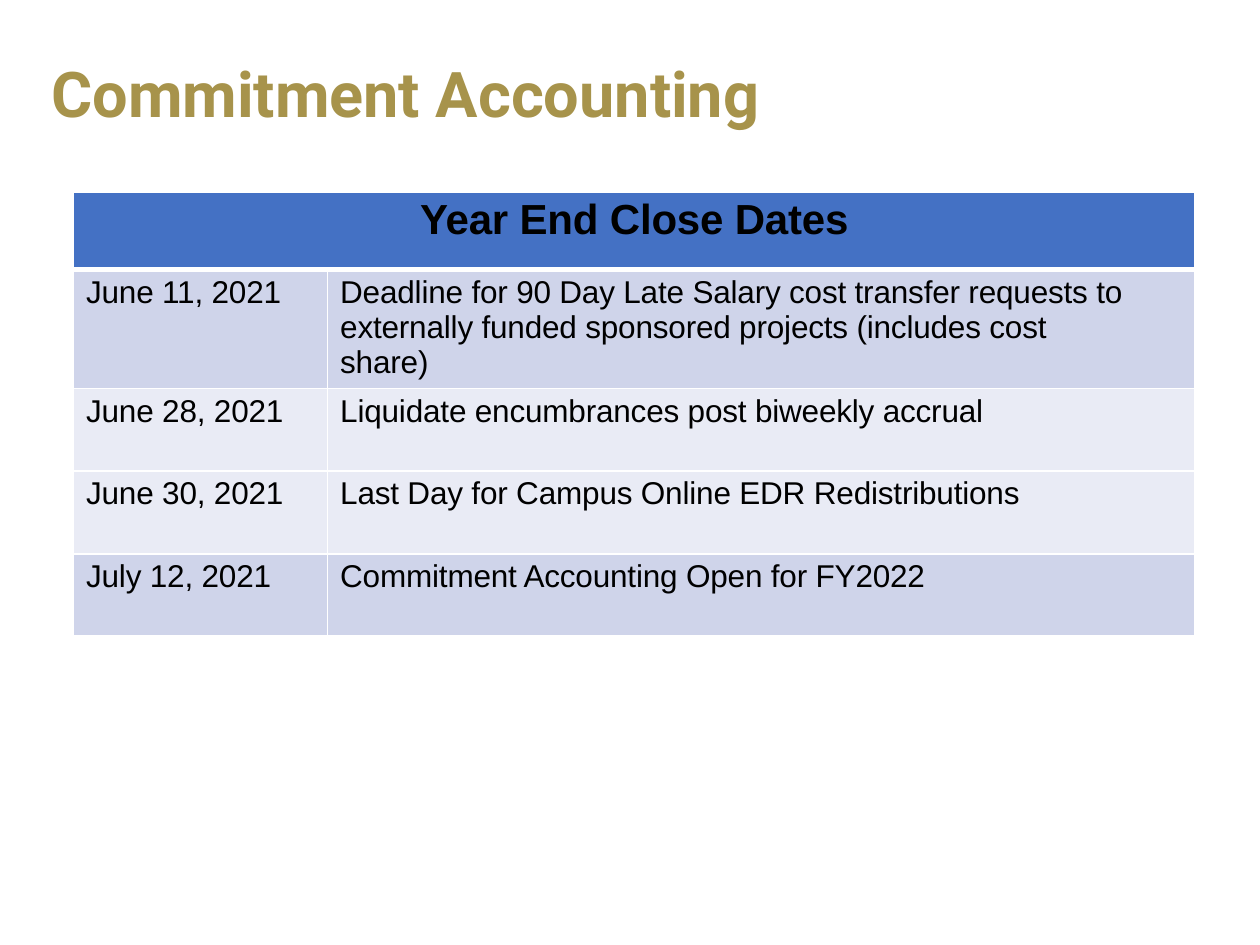
from dataclasses import dataclass

from lxml import etree
from pptx import Presentation
from pptx.dml.color import RGBColor
from pptx.enum.text import MSO_ANCHOR, PP_ALIGN
from pptx.oxml.ns import qn
from pptx.util import Pt

CENTER, LEFT = PP_ALIGN.CENTER, PP_ALIGN.LEFT
MIDDLE = MSO_ANCHOR.MIDDLE
BLANK_LAYOUT = 6


@dataclass(frozen=True)
class Theme:
    title_font: str = "Roboto"
    body_font: str = "Arial"
    title_size: int = 36
    header_size: int = 24
    body_size: int = 18
    gold: str = "A7934B"
    black: str = "000000"
    header_fill: str = "4471C4"
    dark_band: str = "CFD4EA"
    light_band: str = "E9EBF5"
    border: str = "FFFFFF"


THEME = Theme()

HEADING = "Year End Close Dates"
CLOSE_DATES = [
    ("June 11, 2021", "Deadline for 90 Day Late Salary cost transfer requests to "
     "externally funded sponsored projects (includes cost share)", THEME.dark_band),
    ("June 28, 2021", "Liquidate encumbrances post biweekly accrual", THEME.light_band),
    ("June 30, 2021", "Last Day for Campus Online EDR Redistributions", THEME.light_band),
    ("July 12, 2021", "Commitment Accounting Open for FY2022", THEME.dark_band),
]
COLUMN_WIDTHS = (145.2, 495.6)
ROW_HEIGHTS = (44.5, 67, 47.4, 47.4, 46.6)


def style_text(paragraph, font_name, size, color, bold=False, spacing=0):
    """Format every run; spacing is in hundredths of a point."""
    for run in paragraph.runs:
        run.font.name = font_name
        run.font.size = Pt(size)
        run.font.bold = bold
        run.font.color.rgb = RGBColor.from_string(color)
        run.font._element.set("spc", str(spacing))


def set_borders(cell, top=1, bottom=1):
    properties = cell._tc.get_or_add_tcPr()
    for side, width in (("L", 1), ("R", 1), ("T", top), ("B", bottom)):
        line = etree.SubElement(properties, qn(f"a:ln{side}"), w=str(Pt(width)))
        fill = etree.SubElement(line, qn("a:solidFill"))
        etree.SubElement(fill, qn("a:srgbClr"), val=THEME.border)


def fill_cell(cell, text, fill, size, bold=False, align=LEFT, left=0, right=0):
    cell.fill.solid()
    cell.fill.fore_color.rgb = RGBColor.from_string(fill)
    cell.margin_left, cell.margin_right = Pt(left), Pt(right)
    cell.margin_top, cell.margin_bottom = Pt(3), Pt(0)
    paragraph = cell.text_frame.paragraphs[0]
    paragraph.text = text
    paragraph.alignment = align
    style_text(paragraph, THEME.body_font, size, THEME.black, bold, spacing=-10)


def add_title(slide, text):
    title = slide.shapes.add_textbox(Pt(22.3), Pt(15.8), Pt(675.4), Pt(80))
    frame = title.text_frame
    frame.word_wrap = True
    frame.vertical_anchor = MIDDLE
    paragraph = frame.paragraphs[0]
    paragraph.text = text
    paragraph.line_spacing = 0.9
    style_text(paragraph, THEME.title_font, THEME.title_size, THEME.gold, bold=True)


def add_schedule(slide):
    schedule = slide.shapes.add_table(
        len(ROW_HEIGHTS), len(COLUMN_WIDTHS), Pt(42), Pt(109.6),
        Pt(sum(COLUMN_WIDTHS)), Pt(sum(ROW_HEIGHTS))).table
    for column, width in zip(schedule.columns, COLUMN_WIDTHS):
        column.width = Pt(width)
    for index, (row, height) in enumerate(zip(schedule.rows, ROW_HEIGHTS)):
        row.height = Pt(height)
        # A thick rule separates the heading from the dates
        for cell in row.cells:
            set_borders(cell, top=3 if index == 1 else 1, bottom=3 if index == 0 else 1)

    # Heading across both columns
    heading = schedule.cell(0, 0)
    heading.merge(schedule.cell(0, 1))
    fill_cell(heading, HEADING, THEME.header_fill, THEME.header_size, bold=True, align=CENTER)

    # Dates and what is due
    for index, (date, event, band) in enumerate(CLOSE_DATES, start=1):
        fill_cell(schedule.cell(index, 0), date, band, THEME.body_size, left=7.2)
        fill_cell(schedule.cell(index, 1), event, band, THEME.body_size, left=7.2, right=34)


def main():
    deck = Presentation()
    deck.slide_width, deck.slide_height = Pt(720), Pt(540)
    slide = deck.slides.add_slide(deck.slide_layouts[BLANK_LAYOUT])
    add_title(slide, "Commitment Accounting")
    add_schedule(slide)
    deck.save("out.pptx")


if __name__ == "__main__":
    main()
